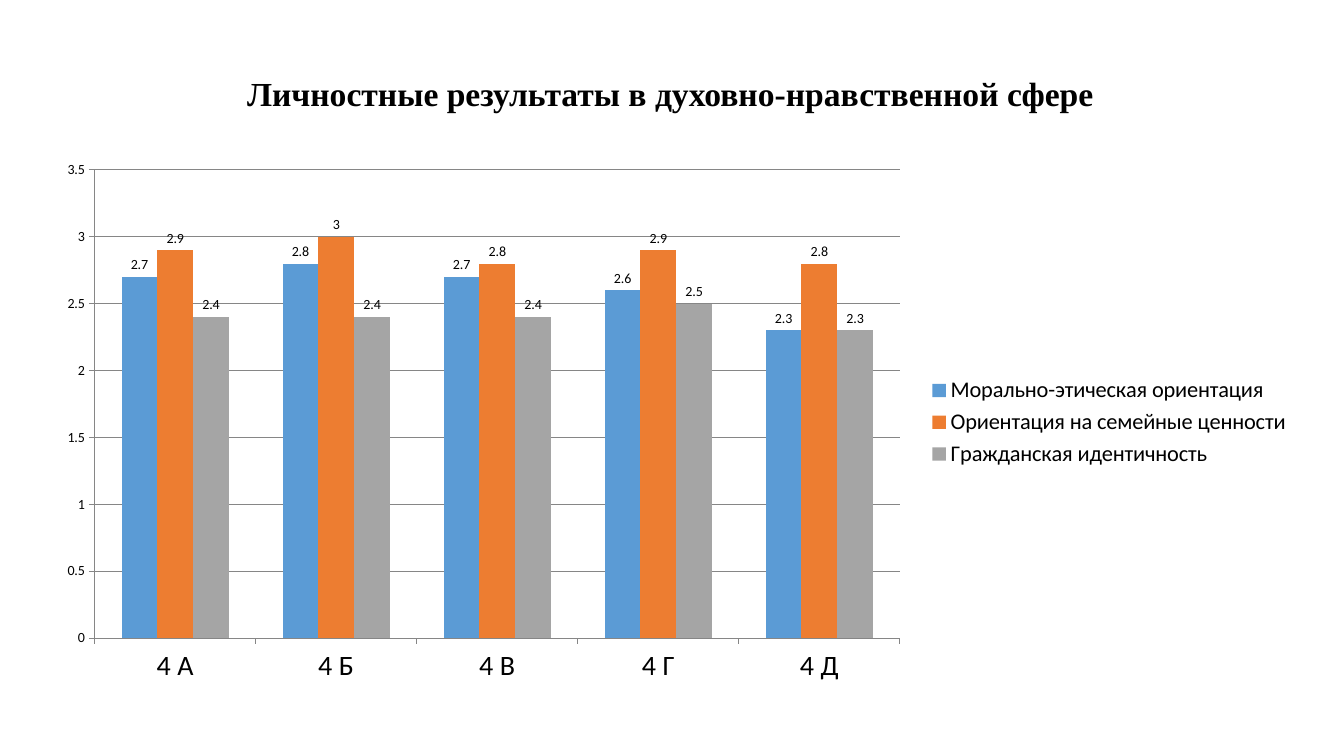
"""Builds a slide with a clustered column chart of pupils' results by class."""
from pptx import Presentation
from pptx.chart.data import CategoryChartData as ChartData
from pptx.dml.color import RGBColor as Rgb
from pptx.enum.chart import XL_CHART_TYPE as Kind, XL_LABEL_POSITION as Spot
from pptx.enum.chart import XL_LEGEND_POSITION as Side, XL_TICK_MARK as Tick
from pptx.enum.text import MSO_ANCHOR as Anchor, PP_ALIGN as Align
from pptx.util import Inches, Pt

HUES = {"text": "000000", "line": "868686", "moral": "5B9BD5",
        "family": "ED7D31", "civic": "A5A5A5"}
GRADES = ["4 А", "4 Б", "4 В", "4 Г", "4 Д"]
ROWS = [
    ("Морально-этическая ориентация", "moral", (2.7, 2.8, 2.7, 2.6, 2.3)),
    ("Ориентация на семейные ценности", "family", (2.9, 3, 2.8, 2.9, 2.8)),
    ("Гражданская идентичность", "civic", (2.4, 2.4, 2.4, 2.5, 2.3)),
]


def style(font, size, face="Calibri", bold=False):
    font.size, font.name, font.bold = Pt(size), face, bold
    font.color.rgb = Rgb.from_string(HUES["text"])


def write(shape, text, align=Align.LEFT, **look):
    frame = shape.text_frame
    frame.word_wrap = True
    frame.vertical_anchor = Anchor.MIDDLE
    para = frame.paragraphs[0]
    para.alignment = align
    para.line_spacing = 1.0
    run = para.add_run()
    run.text = text
    style(run.font, **look)


deck = Presentation()
deck.slide_width, deck.slide_height = Inches(13.33), Inches(7.5)
slide = deck.slides.add_slide(deck.slide_layouts[5])

title = slide.shapes.title
title.left, title.top = Inches(2.35), Inches(0.67)
title.width, title.height = Inches(8.81), Inches(0.5)
write(title, "Личностные результаты в духовно-нравственной сфере",
      size=24, face="Times New Roman", bold=True)

data = ChartData(number_format="General")
data.categories = GRADES
for name, hue, vals in ROWS:
    data.add_series(name, vals)
chart = slide.shapes.add_chart(
    Kind.COLUMN_CLUSTERED, Inches(0.42), Inches(1.5),
    Inches(12.49), Inches(5.38), data).chart
chart.has_title = False
style(chart.font, 10)

plot = chart.plots[0]
plot.gap_width, plot.overlap, plot.vary_by_categories = 150, 0, False
for bars, (name, hue, vals) in zip(plot.series, ROWS):
    bars.format.fill.solid()
    bars.format.fill.fore_color.rgb = Rgb.from_string(HUES[hue])
    bars.invert_if_negative = False
    tags = bars.data_labels
    tags.show_value, tags.position = True, Spot.OUTSIDE_END
    style(tags.font, 10)

base, scale = chart.category_axis, chart.value_axis
scale.minimum_scale, scale.maximum_scale, scale.major_unit = 0, 3.5, 0.5
scale.has_major_gridlines = True
for axis, size in ((base, 20), (scale, 10)):
    axis.major_tick_mark, axis.minor_tick_mark = Tick.OUTSIDE, Tick.NONE
    style(axis.tick_labels.font, size)
for part in (base, scale, scale.major_gridlines):
    part.format.line.color.rgb = Rgb.from_string(HUES["line"])
    part.format.line.width = Pt(0.75)

chart.has_legend = True
chart.legend.position = Side.RIGHT
chart.legend.include_in_layout = False
style(chart.legend.font, 16)

deck.save("out.pptx")
